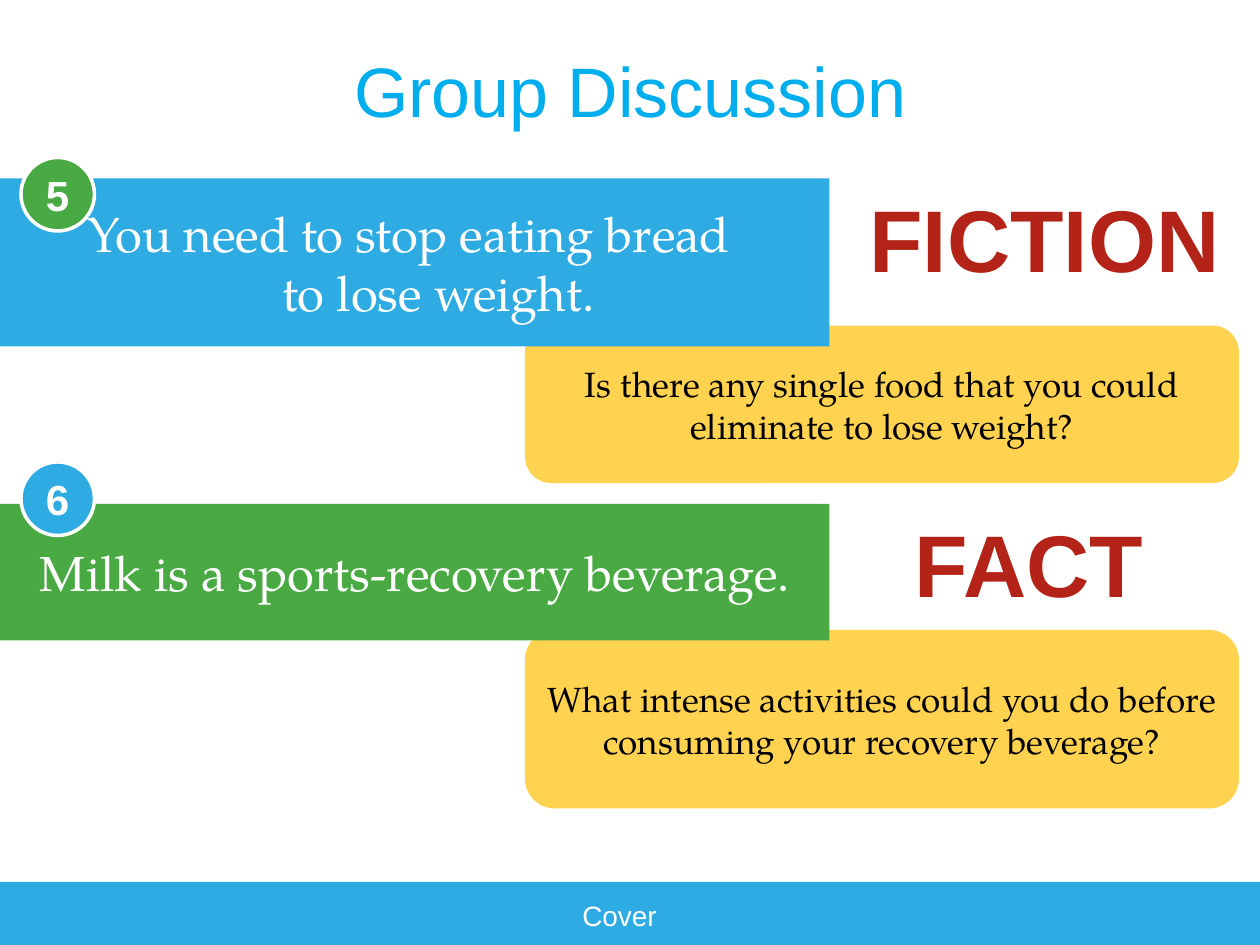
"""Build the group discussion slide with two claims, verdicts and follow-up questions."""
from dataclasses import dataclass

from pptx import Presentation
from pptx import util as u
from pptx.dml.color import RGBColor
from pptx.enum import shapes, text
from pptx.shapes.autoshape import Shape
from pptx.slide import Slide

COLORS = {
    "blue": "2EABE3",
    "green": "49A942",
    "yellow": "FFD24F",
    "red": "B32317",
    "title": "00AEED",
    "white": "FFFFFF",
    "black": "000000",
}
SANS = "Arial"
SERIF = "TeX Gyre Pagella"
KIND = shapes.MSO_SHAPE


@dataclass(frozen=True)
class Box:
    left: float
    top: float
    width: float
    height: float

    def lengths(self) -> tuple:
        return tuple(u.Pt(v) for v in (self.left, self.top, self.width, self.height))


@dataclass(frozen=True)
class Discussion:
    number: str
    claim: str
    verdict: str
    question: str
    claim_color: str
    badge_color: str
    badge_top: float
    claim_top: float
    claim_height: float
    question_height: float
    verdict_left: float
    verdict_width: float


DISCUSSIONS = [
    Discussion("6", "Milk is a sports-recovery beverage.", "FACT",
               "What intense activities could you do before consuming your recovery beverage?",
               "green", "blue", 264, 288, 78, 102, 492, 192),
    Discussion("5", "You need to stop eating bread \vto lose weight.", "FICTION",
               "Is there any single food that you could eliminate to lose weight?",
               "blue", "green", 90, 102, 96, 90, 486, 222),
]


def write(shape: Shape, content: str, *, size: float, color: str, font: str = SANS,
          bold: bool = False, middle: bool = True, hanging: float = 0) -> None:
    """Put one centred paragraph into a shape."""
    frame = shape.text_frame
    frame.word_wrap = True
    frame.vertical_anchor = text.MSO_ANCHOR.MIDDLE if middle else text.MSO_ANCHOR.TOP
    paragraph = frame.paragraphs[0]
    paragraph.text = content
    paragraph.alignment = text.PP_ALIGN.CENTER
    if hanging:
        properties = paragraph._p.get_or_add_pPr()
        properties.set("marL", str(u.Pt(hanging)))
        properties.set("indent", str(-u.Pt(hanging)))
    for run in paragraph.runs:
        run.font.name = font
        run.font.size = u.Pt(size)
        run.font.bold = bold
        run.font.color.rgb = RGBColor.from_string(COLORS[color])


def add_panel(slide: Slide, kind: KIND, box: Box, fill: str, outline: float = 0) -> Shape:
    """Add a filled shape with an optional white outline."""
    shape = slide.shapes.add_shape(kind, *box.lengths())
    shape.shadow.inherit = False
    shape.fill.solid()
    shape.fill.fore_color.rgb = RGBColor.from_string(COLORS[fill])
    if outline:
        shape.line.color.rgb = RGBColor.from_string(COLORS["white"])
        shape.line.width = u.Pt(outline)
    else:
        shape.line.fill.background()
    return shape


def add_label(slide: Slide, box: Box, content: str, **text_format) -> None:
    """Add a text box with formatted text."""
    write(slide.shapes.add_textbox(*box.lengths()), content, **text_format)


def add_discussion(slide: Slide, item: Discussion) -> None:
    """Draw a verdict, a follow-up question, a claim and its number badge."""
    add_label(slide, Box(item.verdict_left, item.claim_top, item.verdict_width, 67.5),
              item.verdict, size=50, color="red", bold=True, middle=False)
    question = add_panel(slide, KIND.ROUNDED_RECTANGLE,
                         Box(300, item.badge_top + 96, 408, item.question_height), "yellow")
    write(question, item.question, size=20, color="black", font=SERIF)
    claim = add_panel(slide, KIND.RECTANGLE,
                      Box(0, item.claim_top, 474, item.claim_height), item.claim_color)
    write(claim, item.claim, size=28, color="white", font=SERIF, hanging=27)
    badge = add_panel(slide, KIND.OVAL, Box(12, item.badge_top, 42, 42),
                      item.badge_color, outline=2)
    write(badge, item.number, size=24, color="white", bold=True)


def main() -> None:
    """Create and save the presentation."""
    presentation = Presentation()
    presentation.slide_width, presentation.slide_height = u.Pt(720), u.Pt(540)
    slide = presentation.slides.add_slide(presentation.slide_layouts[6])
    add_panel(slide, KIND.RECTANGLE, Box(0, 504, 720, 36), "blue")
    add_label(slide, Box(36, 18, 648, 66), "Group Discussion", size=40, color="title")
    for item in DISCUSSIONS:
        add_discussion(slide, item)
    add_label(slide, Box(270, 510, 168, 26.5), "Cover", size=16, color="white", middle=False)
    presentation.save("out.pptx")


if __name__ == "__main__":
    main()
